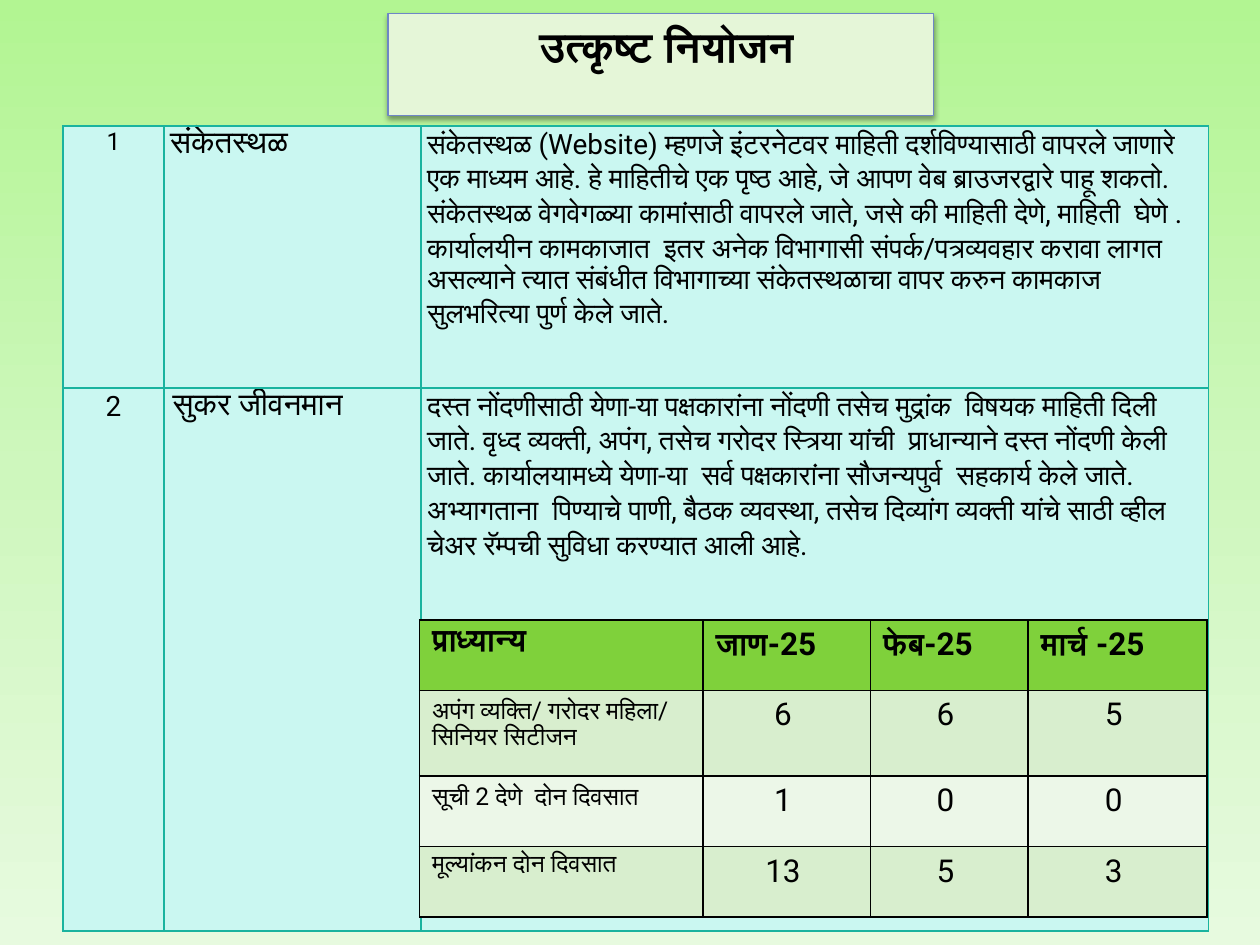
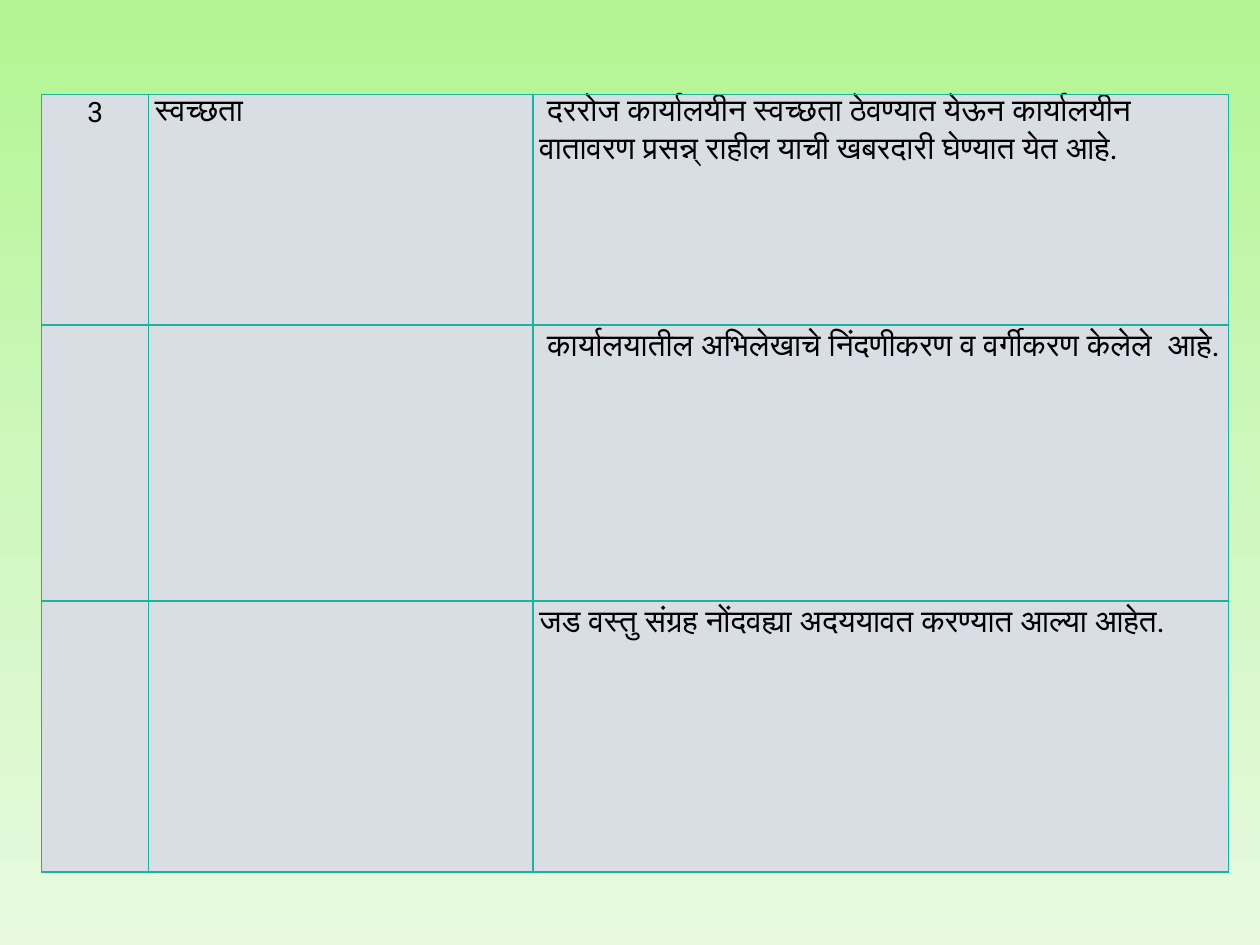
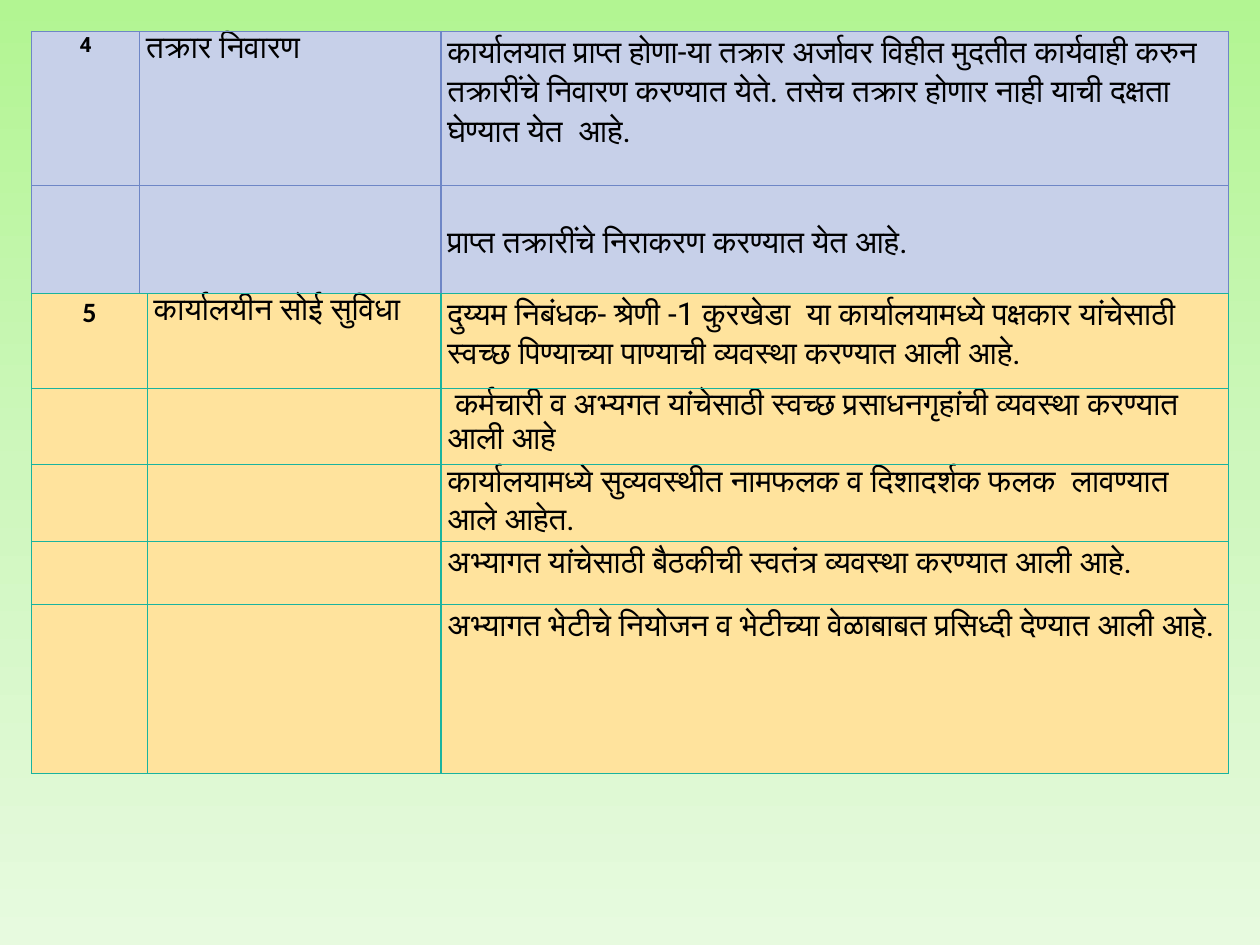
from copy import deepcopy
from dataclasses import dataclass

from lxml.etree import SubElement
from pptx import Presentation
from pptx.dml.color import RGBColor
from pptx.enum.shapes import MSO_SHAPE
from pptx.enum.text import MSO_ANCHOR, PP_ALIGN
from pptx.oxml.ns import qn
from pptx.presentation import Presentation as Deck
from pptx.slide import Slide
from pptx.table import _Cell as Box
from pptx.text.text import TextFrame
from pptx.util import Inches, Pt


@dataclass(frozen=True)
class Theme:
    font: str = "Roboto"
    digit: str = "Calibri"
    ink: str = "000000"
    sky: tuple[str, ...] = ("B2F592", "CEF7BD", "E7FADF")
    teal: str = "1AB39F"
    blue: str = "6E86C6"
    aqua: str = "CAF7F1"
    grey: str = "D9DEE5"
    lilac: str = "C7D0E9"
    sand: str = "FFE39D"
    panel: str = "E5F6D8"
    head: str = "7FD13B"
    band: str = "D8EECE"
    pale: str = "ECF7E8"
    title: int = 24
    large: int = 18
    body: int = 16
    small: int = 14
    tiny: int = 12


THEME = Theme()


@dataclass(frozen=True)
class Cell:
    text: str = ""
    size: int = THEME.large
    bold: bool = False
    center: bool = False
    font: str = THEME.font
    left: float | None = None
    top: float | None = None


@dataclass(frozen=True)
class Grid:
    left: float
    top: float
    cols: tuple[float, ...]
    rows: tuple[float, ...]
    cells: tuple[tuple[Cell, ...], ...]
    fills: tuple[str, ...]
    line: str = THEME.teal
    width: float = 1
    inset: tuple[float, float] = (0.05, 0)
    leading: float | None = 1.07


def mark(text: str, size: int, bold: bool = False, font: str = THEME.font) -> Cell:
    return Cell(text, size, bold, True, font)


def detail(text: str, top: float | None = None) -> tuple[Cell, ...]:
    return Cell(), Cell(), Cell(text, top=top)


def count(name: str, *values: int) -> tuple[Cell, ...]:
    return (Cell(name, THEME.small),
            *(Cell(f"{value} ", center=True) for value in values))


def color(code: str) -> RGBColor:
    return RGBColor.from_string(code)


def write(frame: TextFrame, cell: Cell, leading: float | None = None) -> None:
    frame.text = cell.text
    for para in frame.paragraphs:
        para.alignment = PP_ALIGN.CENTER if cell.center else PP_ALIGN.LEFT
        if leading:
            para.line_spacing = leading
        for run in para.runs:
            run.font.name = cell.font
            run.font.size = Pt(cell.size)
            run.font.bold = cell.bold
            run.font.color.rgb = color(THEME.ink)


def edge(box: Box, code: str, width: float) -> None:
    props = box._tc.get_or_add_tcPr()
    for place, side in enumerate(("lnL", "lnR", "lnT", "lnB")):
        line = SubElement(props, qn(f"a:{side}"), w=str(Pt(width)))
        SubElement(SubElement(line, qn("a:solidFill")), qn("a:srgbClr"), val=code)
        props.insert(place, line)


def draw_grid(slide: Slide, grid: Grid) -> None:
    table = slide.shapes.add_table(
        len(grid.rows), len(grid.cols), Inches(grid.left), Inches(grid.top),
        Inches(sum(grid.cols)), Inches(sum(grid.rows))).table
    table.first_row = table.horz_banding = False
    for col, width in zip(table.columns, grid.cols):
        col.width = Inches(width)
    side, end = grid.inset
    for row, height, cells, fill in zip(table.rows, grid.rows, grid.cells, grid.fills):
        row.height = Inches(height)
        for box, cell in zip(row.cells, cells):
            box.margin_left = Inches(side if cell.left is None else cell.left)
            box.margin_right = Inches(side)
            box.margin_top = Inches(end if cell.top is None else cell.top)
            box.margin_bottom = Inches(end)
            box.fill.solid()
            box.fill.fore_color.rgb = color(fill)
            edge(box, grid.line, grid.width)
            if cell.text:
                write(box.text_frame, cell, grid.leading)


def draw_title(slide: Slide, text: str) -> None:
    shape = slide.shapes.add_shape(
        MSO_SHAPE.RECTANGLE, Inches(3.08), Inches(0.11), Inches(4.33), Inches(0.81))
    shape.fill.solid()
    shape.fill.fore_color.rgb = color(THEME.panel)
    shape.line.color.rgb = color(THEME.blue)
    shape.line.width = Pt(0.75)
    shape.shadow.inherit = False
    glow = SubElement(
        shape._element.spPr.find(qn("a:effectLst")), qn("a:outerShdw"),
        blurRad=str(Pt(3.1)), dist=str(Pt(1.6)), dir="5400000", rotWithShape="0")
    shade = SubElement(glow, qn("a:srgbClr"), val=THEME.ink)
    SubElement(shade, qn("a:alpha"), val="38000")
    frame = shape.text_frame
    frame.word_wrap = True
    frame.vertical_anchor = MSO_ANCHOR.MIDDLE
    frame.margin_bottom = Inches(0.35)
    write(frame, mark(text, THEME.title, True))


def paint_sky(deck: Deck) -> None:
    master = deck.slide_master
    fill = master.background.fill
    fill.gradient()
    fill.gradient_angle = 270
    stops = next(master._element.iter(qn("a:gsLst")))
    stops.append(deepcopy(stops[-1]))
    for place, (stop, code) in enumerate(zip(fill.gradient_stops, THEME.sky)):
        stop.position = place / 2
        stop.color.rgb = color(code)


PLAN = Grid(
    0.5, 1, (0.8, 2.04, 6.25), (2.08, 4.31),
    (
        (mark("1", THEME.small), Cell("संकेतस्थळ"), Cell(
            "संकेतस्थळ (Website) म्हणजे इंटरनेटवर माहिती दर्शविण्यासाठी वापरले जाणारे "
            "एक माध्यम आहे. हे माहितीचे एक पृष्ठ आहे, जे आपण वेब ब्राउजरद्वारे पाहू "
            "शकतो. संकेतस्थळ वेगवेगळ्या कामांसाठी वापरले जाते, जसे की माहिती देणे, "
            "माहिती  घेणे .\n"
            "कार्यालयीन कामकाजात  इतर अनेक विभागासी संपर्क/पत्रव्यवहार करावा लागत "
            "असल्याने त्यात संबंधीत विभागाच्या संकेतस्थळाचा वापर करुन कामकाज "
            "सुलभरित्या पुर्ण केले जाते.", THEME.body)),
        (mark("2", THEME.body), Cell("सुकर जीवनमान", left=0.07), Cell(
            "दस्त नोंदणीसाठी येणा-या पक्षकारांना नोंदणी तसेच मुद्रांक  विषयक माहिती दिली "
            "जाते. वृध्द व्यक्ती, अपंग, तसेच गरोदर स्त्रिया यांची  प्राधान्याने दस्त नोंदणी केली "
            "जाते. कार्यालयामध्ये येणा-या  सर्व पक्षकारांना सौजन्यपुर्व  सहकार्य केले जाते. "
            "अभ्यागताना  पिण्याचे पाणी, बैठक व्यवस्था, तसेच दिव्यांग व्यक्ती यांचे साठी व्हील "
            "चेअर रॅम्पची सुविधा करण्यात आली आहे.", THEME.body)),
    ),
    (THEME.aqua,) * 2)

MONTHS = Grid(
    3.33, 4.92, (2.25, 1.33, 1.25, 1.42), (0.56, 0.68, 0.56, 0.56),
    (
        tuple(Cell(text, bold=True)
              for text in ("प्राध्यान्य", "जाण-25", "फेब-25", "मार्च -25")),
        count("अपंग व्यक्ति/ गरोदर महिला/\nसिनियर सिटीजन", 6, 6, 5),
        count("सूची 2 देणे  दोन दिवसात", 1, 0, 0),
        count("मूल्यांकन दोन दिवसात", 13, 5, 3),
    ),
    (THEME.head, THEME.band, THEME.pale, THEME.band),
    line=THEME.ink, inset=(0.1, 0.05), leading=None)

CLEAN = Grid(
    0.33, 0.75, (0.85, 3.05, 5.52), (1.83, 2.19, 2.15),
    (
        (mark("3", THEME.body), Cell("स्वच्छता"), Cell(
            " दररोज कार्यालयीन स्वच्छता ठेवण्यात येऊन कार्यालयीन वातावरण प्रसन्न् "
            "राहील याची खबरदारी घेण्यात येत आहे.")),
        detail(" कार्यालयातील अभिलेखाचे निंदणीकरण व वर्गीकरण केलेले  आहे."),
        detail("जड वस्तु संग्रह नोंदवह्या अदययावत करण्यात आल्या आहेत."),
    ),
    (THEME.grey,) * 3)

CLAIMS = Grid(
    0.25, 0.25, (0.86, 2.39, 6.25), (1.22, 0.86),
    (
        (mark("4", THEME.tiny, True), Cell("तक्रार निवारण"), Cell(
            "कार्यालयात प्राप्त होणा-या तक्रार अर्जावर विहीत मुदतीत कार्यवाही करुन "
            "तक्रारींचे निवारण करण्यात येते. तसेच तक्रार होणार नाही याची दक्षता "
            "घेण्यात येत  आहे.")),
        detail("प्राप्त तक्रारींचे निराकरण करण्यात येत आहे.", 0.29),
    ),
    (THEME.lilac,) * 2, line=THEME.blue, width=0.75)

COMFORT = Grid(
    0.25, 2.33, (0.92, 2.33, 6.25), (0.75, 0.61, 0.61, 0.5, 1.34),
    (
        (mark("5", THEME.body, True, THEME.digit), Cell("कार्यालयीन सोई सुविधा"), Cell(
            "दुय्यम निबंधक- श्रेणी -1 कुरखेडा  या कार्यालयामध्ये पक्षकार यांचेसाठी "
            "स्वच्छ पिण्याच्या पाण्याची व्यवस्था करण्यात आली आहे.")),
        detail(" कर्मचारी व अभ्यगत यांचेसाठी स्वच्छ प्रसाधनगृहांची व्यवस्था करण्यात आली आहे"),
        detail("कार्यालयामध्ये सुव्यवस्थीत नामफलक व दिशादर्शक फलक  लावण्यात आले आहेत."),
        detail("अभ्यागत यांचेसाठी बैठकीची स्वतंत्र व्यवस्था करण्यात आली आहे."),
        detail("अभ्यागत भेटीचे नियोजन व भेटीच्या वेळाबाबत प्रसिध्दी देण्यात आली आहे."),
    ),
    (THEME.sand,) * 5, width=0.75)


def main() -> None:
    deck = Presentation()
    deck.slide_width, deck.slide_height = Inches(10), Inches(7.5)
    paint_sky(deck)
    first, second, third = (
        deck.slides.add_slide(deck.slide_layouts[6]) for _ in range(3))
    draw_grid(first, PLAN)
    draw_title(first, " उत्कृष्ट नियोजन")
    draw_grid(first, MONTHS)
    draw_grid(second, CLEAN)
    draw_grid(third, CLAIMS)
    draw_grid(third, COMFORT)
    deck.save("out.pptx")


if __name__ == "__main__":
    main()
